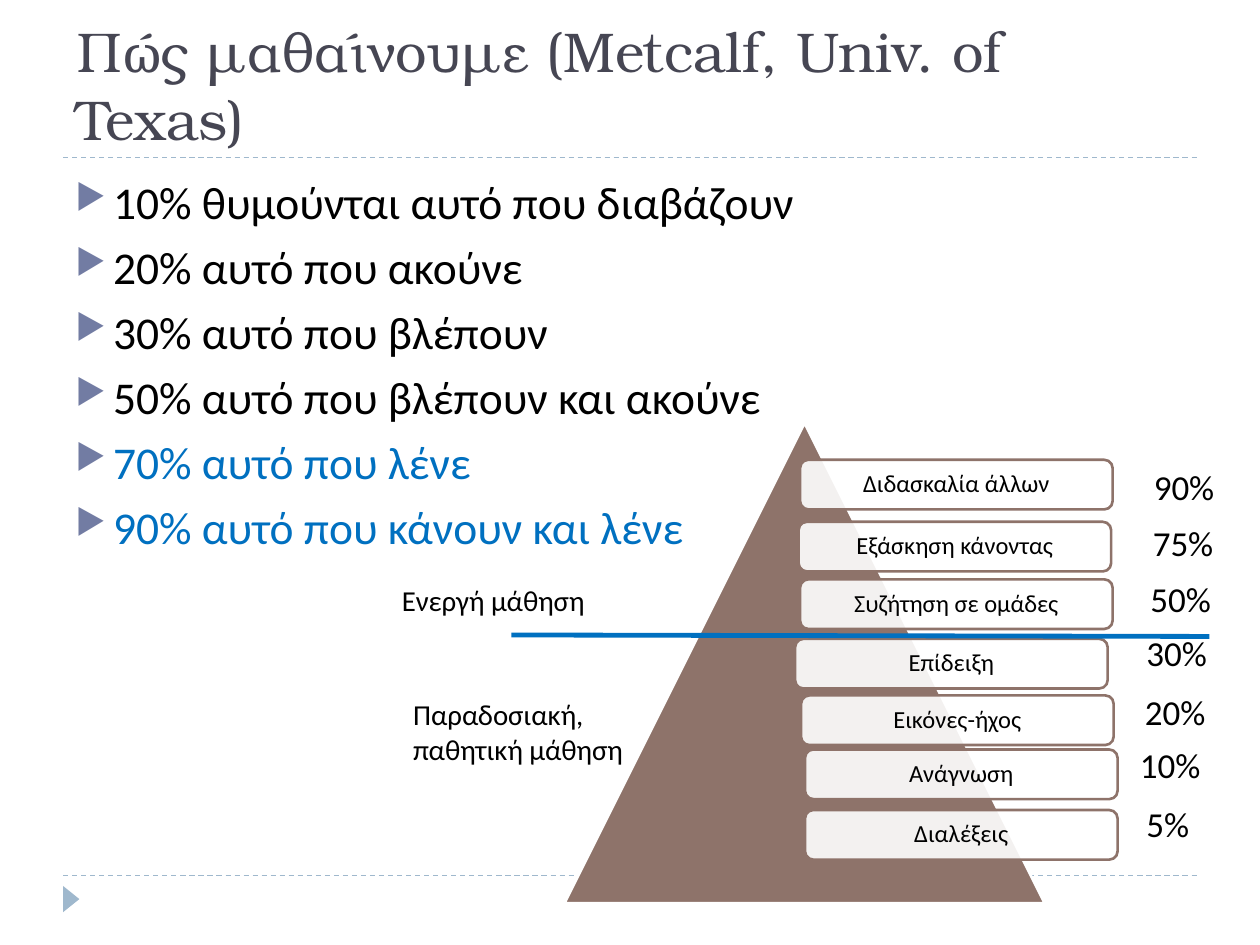
import dataclasses

import lxml.etree
import pptx
import pptx.dml.color
import pptx.enum.dml
import pptx.enum.shapes
import pptx.enum.text
import pptx.oxml.ns
import pptx.util

Cm = pptx.util.Cm
Pt = pptx.util.Pt
SHAPES = pptx.enum.shapes.MSO_SHAPE
ALIGN = pptx.enum.text.PP_ALIGN
ANCHOR = pptx.enum.text.MSO_ANCHOR


@dataclasses.dataclass(frozen=True)
class Theme:
    heading_font: str = "TeX Gyre Bonum"
    body_font: str = "Calibri"
    heading: str = "464653"
    text: str = "000000"
    accent: str = "0070C0"
    bullet: str = "727CA3"
    rule: str = "9FB8CD"
    pyramid: str = "8E736A"
    white: str = "FFFFFF"
    title_size: float = 32
    bullet_size: float = 26
    percent_size: float = 20
    note_size: float = 16.5
    level_size: float = 14


def color(value):
    return pptx.dml.color.RGBColor.from_string(value)


def apply_format(target, values):
    for name, value in values.items():
        setattr(target, name, value)


def add_element(parent, tag, **attributes):
    return lxml.etree.SubElement(parent, pptx.oxml.ns.qn(tag), attributes)


class SlideBuilder:
    def __init__(self, slide, theme):
        self.slide = slide
        self.theme = theme

    def fill_paragraph(self, paragraph, text, size, font_color=None, font=None, **layout):
        paragraph.text = text
        apply_format(paragraph, layout)
        apply_format(paragraph.font, {"name": font or self.theme.body_font, "size": Pt(size)})
        paragraph.font.color.rgb = color(font_color or self.theme.text)

    def title(self, text, left, top, width, height):
        shape = self.slide.shapes.title
        apply_format(shape, {"left": Cm(left), "top": Cm(top),
                             "width": Cm(width), "height": Cm(height)})
        apply_format(shape.text_frame, {"word_wrap": True, "vertical_anchor": ANCHOR.BOTTOM,
                                        "auto_size": pptx.enum.text.MSO_AUTO_SIZE.NONE})
        self.fill_paragraph(shape.text_frame.paragraphs[0], text, self.theme.title_size,
                            self.theme.heading, self.theme.heading_font, alignment=ALIGN.LEFT)

    def text_frame(self, left, top, width, height, wrap=True):
        frame = self.slide.shapes.add_textbox(
            Cm(left), Cm(top), Cm(width), Cm(height)).text_frame
        frame.word_wrap = wrap
        return frame

    def note(self, lines, size, left, top, width, height, wrap=True):
        frame = self.text_frame(left, top, width, height, wrap)
        for index, line in enumerate(lines):
            paragraph = frame.add_paragraph() if index else frame.paragraphs[0]
            self.fill_paragraph(paragraph, line, size)

    def bullets(self, items, left, top, width, height):
        frame = self.text_frame(left, top, width, height)
        for index, (text, font_color) in enumerate(items):
            paragraph = frame.add_paragraph() if index else frame.paragraphs[0]
            properties = paragraph._p.get_or_add_pPr()
            for name, value in {"marL": Cm(0.76), "indent": Cm(-0.76)}.items():
                properties.set(name, str(int(value)))
            bullet_color = add_element(properties, "a:buClr")
            add_element(bullet_color, "a:srgbClr", val=self.theme.bullet)
            add_element(properties, "a:buSzPct", val="76000")
            add_element(properties, "a:buChar", char="▶")
            self.fill_paragraph(paragraph, text, self.theme.bullet_size, font_color,
                                space_before=Pt(6 if index else 0))

    def shape(self, kind, left, top, width, height, fill, line=None, rotation=0):
        shape = self.slide.shapes.add_shape(kind, Cm(left), Cm(top), Cm(width), Cm(height))
        shape.shadow.inherit = False
        shape.rotation = rotation
        shape.fill.solid()
        shape.fill.fore_color.rgb = color(fill)
        if line:
            shape.line.color.rgb = color(line)
            shape.line.width = Pt(1.5)
        else:
            shape.line.fill.background()
        return shape

    def level(self, text, left, top):
        shape = self.shape(SHAPES.ROUNDED_RECTANGLE, left, top, 6.3, 1,
                           self.theme.white, self.theme.pyramid)
        fill = shape._element.spPr.find(pptx.oxml.ns.qn("a:solidFill"))
        add_element(fill[0], "a:alpha", val="90000")
        margins = ("margin_left", "margin_top", "margin_right", "margin_bottom")
        apply_format(shape.text_frame, dict.fromkeys(margins, Cm(0.15)))
        apply_format(shape.text_frame, {"word_wrap": True, "vertical_anchor": ANCHOR.MIDDLE})
        self.fill_paragraph(shape.text_frame.paragraphs[0], text, self.theme.level_size,
                            alignment=ALIGN.CENTER, line_spacing=0.9)

    def line(self, start, end, line_color, width, dash=None):
        connector = self.slide.shapes.add_connector(
            pptx.enum.shapes.MSO_CONNECTOR.STRAIGHT, *map(Cm, start + end))
        connector.line.color.rgb = color(line_color)
        apply_format(connector.line, {"width": Pt(width), "dash_style": dash})
        add_element(connector._element.spPr, "a:effectLst")


def main():
    presentation = pptx.Presentation()
    apply_format(presentation, {"slide_width": Cm(25.4), "slide_height": Cm(19.05)})
    theme = Theme()
    builder = SlideBuilder(presentation.slides.add_slide(presentation.slide_layouts[5]), theme)

    for height in (17.65, 3.18):
        builder.line((1.27, height), (24.13, height), theme.rule, 0.75,
                     pptx.enum.dml.MSO_LINE.DASH)
    builder.shape(SHAPES.ISOSCELES_TRIANGLE, 1.17, 17.96, 0.53, 0.33, theme.rule, rotation=90)
    builder.title("Πώς μαθαίνουμε (Metcalf, Univ. of Texas)", 1.27, 0.43, 22.86, 2.75)
    builder.bullets([
        ("10% θυμούνται αυτό που διαβάζουν", theme.text),
        ("20% αυτό που ακούνε", theme.text),
        ("30% αυτό που βλέπουν", theme.text),
        ("50% αυτό που βλέπουν και ακούνε", theme.text),
        ("70% αυτό που λένε", theme.accent),
        ("90% αυτό που κάνουν και λένε", theme.accent),
    ], 1.27, 3.38, 22.86, 13.72)

    builder.shape(SHAPES.ISOSCELES_TRIANGLE, 11.38, 8.53, 9.68, 9.68,
                  theme.pyramid, theme.white)
    levels = [
        ("Διαλέξεις", 16.23, 16.33, "5%", 22.86, 16.05),
        ("Ανάγνωση", 16.23, 15.11, "10%", 22.73, 14.86),
        ("Εικόνες-ήχος", 16.15, 14.02, "20%", 22.83, 13.79),
        ("Επίδειξη", 16.03, 12.88, "30%", 22.86, 12.6),
        ("Συζήτηση σε ομάδες", 16.13, 11.68, "50%", 22.94, 11.51),
        ("Εξάσκηση κάνοντας", 16.1, 10.52, "75%", 22.99, 10.39),
        ("Διδασκαλία άλλων", 16.13, 9.27, "90%", 23.01, 9.25),
    ]
    for name, left, top, percent, percent_left, percent_top in levels:
        builder.level(name, left, top)
        builder.note([percent], theme.percent_size, percent_left, percent_top, 1.75, 1.12)

    builder.line((10.31, 12.8), (24.38, 12.83), theme.accent, 2.75)
    builder.note(["Παραδοσιακή,", "παθητική μάθηση"], theme.note_size,
                 8.08, 13.92, 4.8, 1.68, wrap=False)
    builder.note(["Ενεργή μάθηση"], theme.note_size, 7.85, 11.63, 4.37, 0.97, wrap=False)
    presentation.save("out.pptx")


if __name__ == "__main__":
    main()
